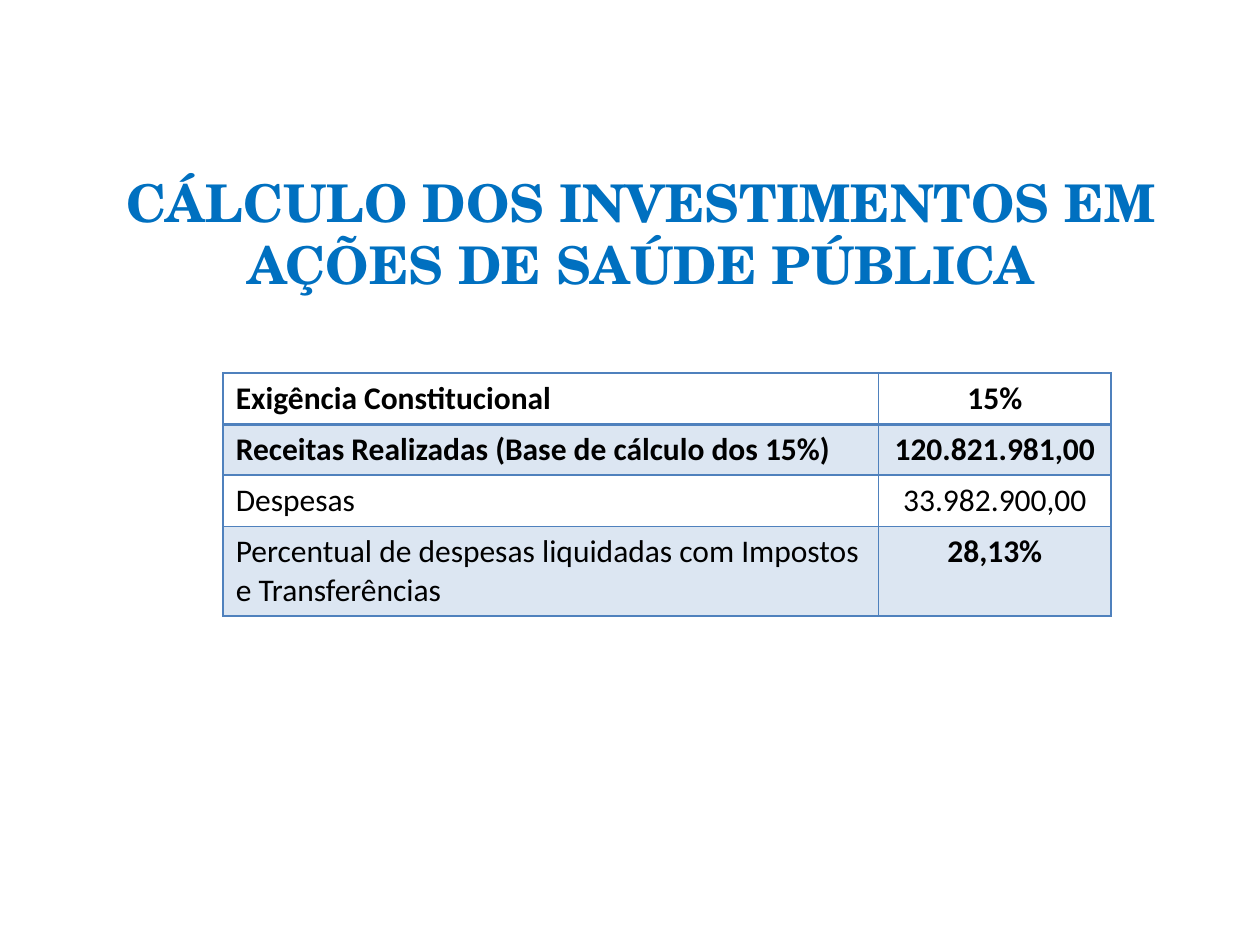
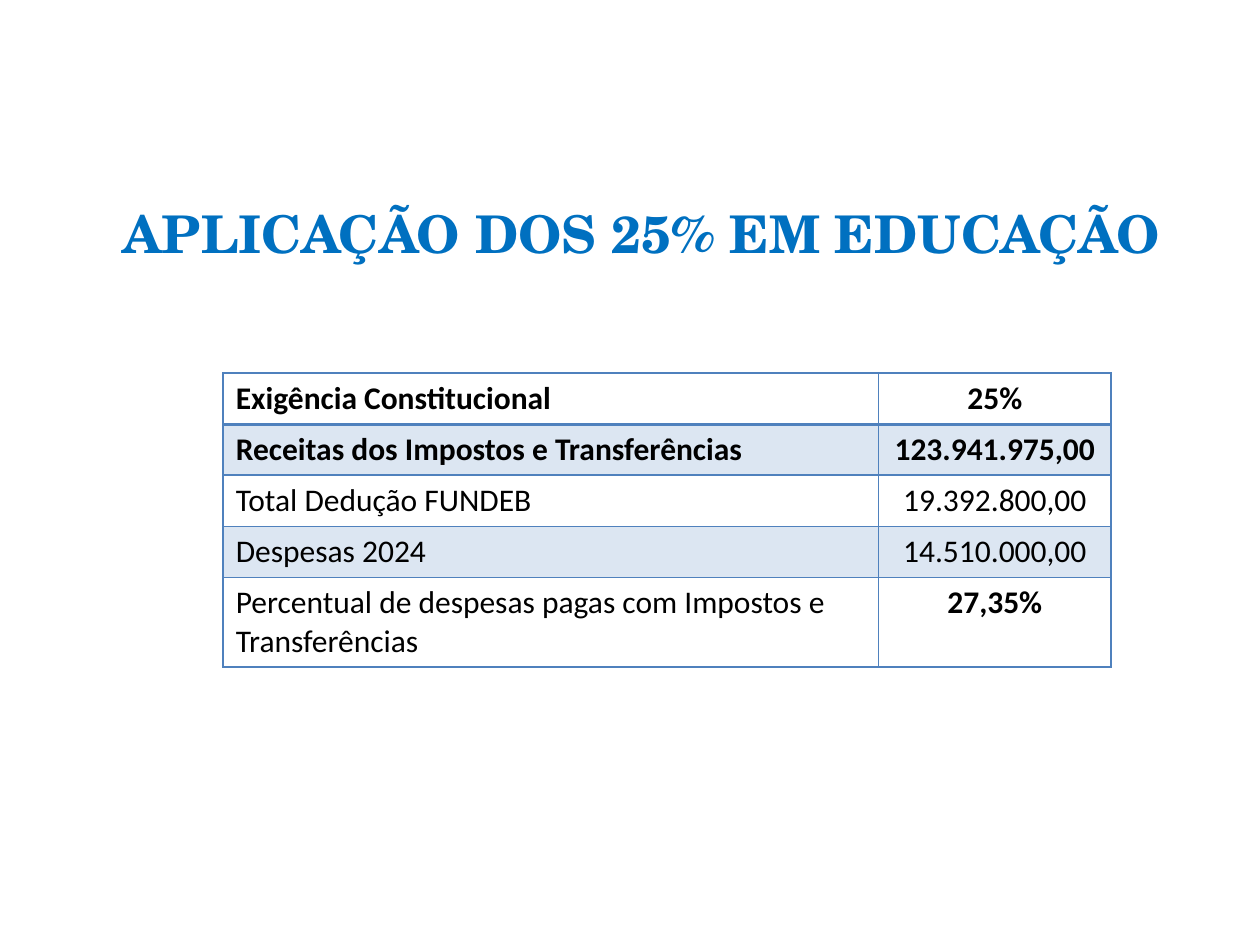
"""Build two slides on public investment in health and education."""
import lxml.etree
import pptx
import pptx.dml.color
import pptx.enum.text
import pptx.oxml.ns
import pptx.util
from pptx.util import Cm, Pt

TITLE_BLUE = pptx.dml.color.RGBColor(0x00, 0x70, 0xC0)
GRID_BLUE = pptx.dml.color.RGBColor(0x4F, 0x81, 0xBD)
BAND_BLUE = pptx.dml.color.RGBColor(0xDC, 0xE6, 0xF2)
BLACK = pptx.dml.color.RGBColor(0, 0, 0)

TITLE_FONT, BODY_FONT = "TeX Gyre Schola", "Calibri"
TITLE_BOX = (Cm(1.5), Cm(1.93), Cm(22.86), Cm(5.53))
TABLE_CORNER = (Cm(4.5), Cm(7.52))
COLUMN_WIDTHS = (Cm(13.21), Cm(4.69))
ROW_HEIGHT, LAST_ROW_HEIGHT = Cm(1.03), Cm(1.81)

HEALTH = (
    "CÁLCULO DOS INVESTIMENTOS EM AÇÕES DE SAÚDE PÚBLICA",
    [
        ("Exigência Constitucional", "15%"),
        ("Receitas Realizadas (Base de cálculo dos 15%)", "120.821.981,00"),
        ("Despesas", "33.982.900,00"),
        ("Percentual de despesas liquidadas com Impostos e Transferências", "28,13%"),
    ],
)
EDUCATION = (
    "APLICAÇÃO DOS 25% EM EDUCAÇÃO",
    [
        ("Exigência Constitucional", "25%"),
        ("Receitas dos Impostos e Transferências", "123.941.975,00"),
        ("Total Dedução FUNDEB", "19.392.800,00"),
        ("Despesas 2024", "14.510.000,00"),
        ("Percentual de despesas pagas com Impostos e Transferências", "27,35%"),
    ],
)


def add_run(paragraph, text, font_name, size, color, bold):
    """Append one formatted run."""
    run = paragraph.add_run()
    run.text = text
    run.font.name = font_name
    run.font.size = Pt(size)
    run.font.color.rgb = color
    run.font.bold = bold


def add_title(slide, box, text):
    """Place the centred slide title in the box."""
    title = slide.shapes.add_textbox(*box).text_frame
    title.word_wrap = True
    title.vertical_anchor = pptx.enum.text.MSO_ANCHOR.MIDDLE
    title.paragraphs[0].alignment = pptx.enum.text.PP_ALIGN.CENTER
    add_run(title.paragraphs[0], text, TITLE_FONT, 29.7, TITLE_BLUE, True)


def set_borders(cell, top, bottom):
    """Draw the grid around a cell with the given top and bottom weights."""
    properties = cell._tc.get_or_add_tcPr()
    for side, weight in (("lnL", 1), ("lnR", 1), ("lnT", top), ("lnB", bottom)):
        line = lxml.etree.SubElement(
            properties, pptx.oxml.ns.qn(f"a:{side}"), w=str(Pt(weight)))
        fill = lxml.etree.SubElement(line, pptx.oxml.ns.qn("a:solidFill"))
        lxml.etree.SubElement(fill, pptx.oxml.ns.qn("a:srgbClr"), val=str(GRID_BLUE))


def add_budget_table(slide, corner, entries):
    """Place the table of labels and amounts at the corner."""
    last = len(entries) - 1
    height = ROW_HEIGHT * last + LAST_ROW_HEIGHT
    table = slide.shapes.add_table(
        len(entries), len(COLUMN_WIDTHS), *corner, sum(COLUMN_WIDTHS), height).table
    table.first_row = table.horz_banding = False
    for column, width in zip(table.columns, COLUMN_WIDTHS):
        column.width = width
    for row, entry in enumerate(entries):
        table.rows[row].height = LAST_ROW_HEIGHT if row == last else ROW_HEIGHT
        for column, text in enumerate(entry):
            is_amount = column == 1
            cell = table.cell(row, column)
            set_borders(cell, 2 if row == 1 else 1, 2 if row == 0 else 1)
            if row % 2:
                cell.fill.solid()
                cell.fill.fore_color.rgb = BAND_BLUE
            else:
                cell.fill.background()
            paragraph = cell.text_frame.paragraphs[0]
            if is_amount:
                paragraph.alignment = pptx.enum.text.PP_ALIGN.CENTER
            bold = row < 2 or (is_amount and row == last)
            add_run(paragraph, text, BODY_FONT, 18, BLACK, bold)


def main():
    """Build and save the presentation."""
    presentation = pptx.Presentation()
    presentation.slide_width, presentation.slide_height = Cm(25.4), Cm(19.05)
    for title, entries in (HEALTH, EDUCATION):
        slide = presentation.slides.add_slide(presentation.slide_layouts[6])
        add_title(slide, TITLE_BOX, title)
        add_budget_table(slide, TABLE_CORNER, entries)
    presentation.save("out.pptx")


if __name__ == "__main__":
    main()
